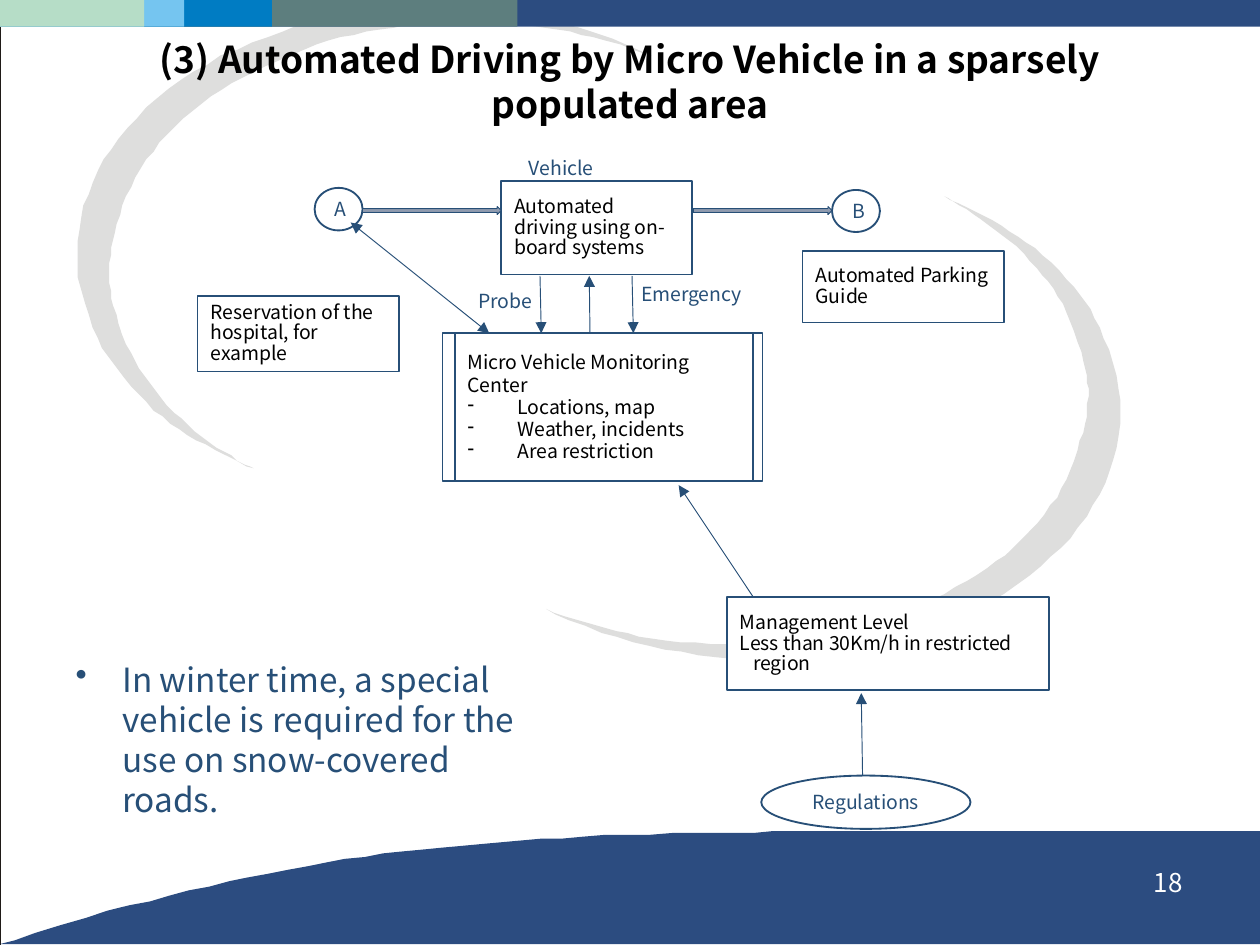
from lxml import etree
from pptx import Presentation
from pptx import util as u
from pptx.dml import color
from pptx.enum import shapes, text
from pptx.oxml import ns

FONT = "Noto Sans CJK JP"
NAVY, INK, WHITE, GREY, BLACK = "2C4C80", "274F77", "FFFFFF", "DEDEDD", "000000"
LEFT, CENTER, RIGHT = text.PP_ALIGN.LEFT, text.PP_ALIGN.CENTER, text.PP_ALIGN.RIGHT
TOP, MIDDLE = text.MSO_ANCHOR.TOP, text.MSO_ANCHOR.MIDDLE
KIND = shapes.MSO_SHAPE
SWOOSH_OUTER = [
    (352, 30.2), (313.2, 15.1), (269.3, 5.8), (223.9, 3.6), (185, 7.9), (152.6, 16.6),
    (111.6, 34.6), (79.2, 58.3), (56.2, 86.4), (43.9, 117.4), (42.5, 149.8),
    (52.6, 182.9), (67, 204.5), (87.8, 225.4), (110.9, 240.5), (136.8, 253.4)]
SWOOSH_INNER = [
    (136.8, 253.4), (121, 244.1), (101.5, 229.7), (83.5, 211), (70.6, 190.8),
    (61.2, 164.9), (59, 145.4), (61.9, 126), (70.6, 100.8), (86.4, 77), (108.7, 56.2),
    (136.8, 38.9), (170.6, 24.5), (205.2, 15.8), (246.2, 11.5), (287.3, 13.7),
    (320.4, 20.2), (352, 30.2)]
HILL = [
    (0, 510.5), (58.3, 492.5), (113, 478.8), (165.6, 468), (217.4, 460.1),
    (270.7, 455), (326.9, 451.4), (388.1, 450), (455.8, 449.3), (683.3, 449.3)]


def rgb(value):
    """Return the colour for a hex string."""
    return color.RGBColor.from_string(value)


def points(values):
    """Turn plain numbers into lengths."""
    return [u.Pt(value) for value in values]


def smooth(knots, steps=5):
    """Return a dense curve that passes through all knots."""
    padded = [knots[0], *knots, knots[-1]]
    curve = [knots[0]]
    for a, b, c, d in zip(padded, padded[1:], padded[2:], padded[3:]):
        for step in range(1, steps + 1):
            t = step / steps
            curve.append(tuple(
                q + t / 2 * (r - p + t * (2 * p - 5 * q + 4 * r - s + t * (3 * (q - r) + s - p)))
                for p, q, r, s in zip(a, b, c, d)))
    return curve


def paint(shape, fill=None, line=None, width=1):
    """Set the fill and outline of a shape and drop its shadow."""
    shape.shadow.inherit = False
    if fill:
        shape.fill.solid()
        shape.fill.fore_color.rgb = rgb(fill)
    else:
        shape.fill.background()
    if line:
        shape.line.color.rgb = rgb(line)
        shape.line.width = u.Pt(width)
    else:
        shape.line.fill.background()


def add_outline(page, outline, fill):
    """Draw a closed filled outline."""
    builder = page.shapes.build_freeform(*outline[0], scale=u.Pt(1))
    builder.add_line_segments(outline[1:], close=True)
    paint(builder.convert_to_shape(), fill)


def write(shape, lines, size=10.5, ink=BLACK, align=LEFT, anchor=MIDDLE,
          spacing=None, bold=False, hang=0, bullet=None, first=0):
    """Write lines into a shape; lines from index first on hang and take the bullet."""
    frame = shape.text_frame
    frame.word_wrap = True
    frame.vertical_anchor = anchor
    for index, line in enumerate(lines):
        para = frame.add_paragraph() if index else frame.paragraphs[0]
        if hang and index >= first:
            properties = para._p.get_or_add_pPr()
            properties.set("marL", str(u.Pt(hang)))
            properties.set("indent", str(-u.Pt(hang)))
            if bullet:
                etree.SubElement(properties, ns.qn("a:buChar")).set("char", bullet)
        layout = {"alignment": align, "line_spacing": u.Pt(spacing or size * 1.2)}
        for name, value in layout.items():
            setattr(para, name, value)
        span = para.add_run()
        span.text = line
        style = {"name": FONT, "size": u.Pt(size), "bold": bold}
        for name, value in style.items():
            setattr(span.font, name, value)
        span.font.color.rgb = rgb(ink)


def add_text(page, place, lines, **style):
    """Add a text box without outline."""
    box = page.shapes.add_textbox(*points(place))
    write(box, lines, **{"anchor": TOP, **style})


def add_box(page, place, lines=(), kind=KIND.RECTANGLE, fill=None, **style):
    """Add an outlined shape with text."""
    box = page.shapes.add_shape(kind, *points(place))
    paint(box, fill, INK)
    write(box, lines, **{"spacing": 11, **style})


def add_bubble(page, place, label):
    """Add a white ellipse with a centred label."""
    add_box(page, place, [label], KIND.OVAL, WHITE, ink=INK, align=CENTER, spacing=12.6)


def add_arrow(page, ends, both=False):
    """Add a thin arrow that points at its last end, or at both."""
    arrow = page.shapes.add_connector(shapes.MSO_CONNECTOR.STRAIGHT, *points(ends))
    arrow.line.color.rgb = rgb(INK)
    arrow.line.width = u.Pt(0.5)
    line = arrow.line._get_or_add_ln()
    for end in ["headEnd", "tailEnd"] if both else ["tailEnd"]:
        etree.SubElement(line, ns.qn("a:" + end)).set("type", "triangle")
    etree.SubElement(arrow._element.spPr, ns.qn("a:effectLst"))


def add_route(page, left):
    """Add a slim shaded block arrow of the driving route."""
    route = page.shapes.add_shape(KIND.RIGHT_ARROW, *points([left, 111.6, 74.9, 4.3]))
    paint(route, line=INK, width=0.5)
    route.fill.gradient()
    route.fill.gradient_angle = 270
    for stop, value in zip(route.fill.gradient_stops, ["9FA9B9", "7F8CA3"]):
        stop.color.rgb = rgb(value)


def add_backdrop(page):
    """Draw the frame, swooshes, top band and hill."""
    frame = page.shapes.add_shape(KIND.RECTANGLE, *points([0, 0, 681, 510.5]))
    paint(frame, line="1F1A17", width=0.13)
    swoosh = smooth(SWOOSH_OUTER) + smooth(SWOOSH_INNER)[1:]
    add_outline(page, swoosh, GREY)
    add_outline(page, [(646.6 - x, 359.6 - y) for x, y in swoosh], GREY)
    bands = [(681, NAVY), (279.4, "5D7E7E"), (146.9, "007CC3"), (99.4, "75C5F0"), (77.8, "B6DDC7")]
    for width, fill in bands:
        paint(page.shapes.add_shape(KIND.RECTANGLE, *points([0, 0, width, 14.4])), fill)
    add_outline(page, smooth(HILL) + [(681, 510.5)], NAVY)


def add_diagram(page):
    """Draw the vehicle, the centre, the rules and the links between them."""
    add_box(page, [270.7, 97.9, 103, 50.4], ["Automated driving using on-board systems"])
    add_bubble(page, [169.9, 101.5, 25.9, 23], "A")
    add_bubble(page, [449.3, 102.6, 25.9, 22.7], "B")
    add_box(page, [433.4, 135.4, 108.7, 38.9], ["Automated Parking Guide"])
    add_box(page, [106.6, 159.8, 108.7, 41], ["Reservation of the hospital, for example"])
    add_box(page, [239, 180, 172.8, 79.9])
    add_box(page, [245.5, 180, 161.3, 79.9],
            ["Micro Vehicle Monitoring Center", "Locations, map", "Weather, incidents",
             "Area restriction"], spacing=12, hang=27, bullet="-", first=1)
    add_box(page, [392.4, 322.6, 174.2, 50.4],
            ["Management Level", "Less than 30Km/h in restricted region"],
            fill=WHITE, hang=7.2, first=1)
    add_bubble(page, [411.1, 419, 113, 28.8], "Regulations")
    labels = [("Vehicle", 278.6, 80.6, 60.5), ("Emergency", 339.1, 149, 72),
              ("Probe", 251.3, 152.6, 55.4)]
    for label, left, top, width in labels:
        add_text(page, [left, top, width, 21.6], [label], ink=INK)
    for left in (195.8, 374.4):
        add_route(page, left)
    add_arrow(page, [189.4, 120.2, 264.2, 180], both=True)
    for ends in [(291.6, 149, 292.3, 180), (341.3, 149, 342, 180), (318.6, 180, 318.2, 149),
                 (406.8, 322.6, 366.5, 262.1), (465.8, 419, 465.1, 374.4)]:
        add_arrow(page, ends)


def main():
    """Build the slide and save it."""
    deck = Presentation()
    deck.slide_width, deck.slide_height = points([680.4, 510.5])
    page = deck.slides.add_slide(deck.slide_layouts[6])
    add_backdrop(page)
    add_text(page, [33.8, 12.5, 612.7, 62.6],
             ["(3) Automated Driving by Micro Vehicle in a sparsely populated area"],
             size=20, bold=True, align=CENTER, anchor=MIDDLE)
    add_text(page, [33.8, 352.4, 258.5, 97.9],
             ["In winter time, a special vehicle is required for the use on snow-covered roads."],
             size=18, ink=INK, hang=25.2, bullet="•")
    add_diagram(page)
    add_text(page, [487.4, 464.4, 158.4, 35.3], ["18"], size=14, ink=WHITE, align=RIGHT)
    deck.save("out.pptx")


if __name__ == "__main__":
    main()
